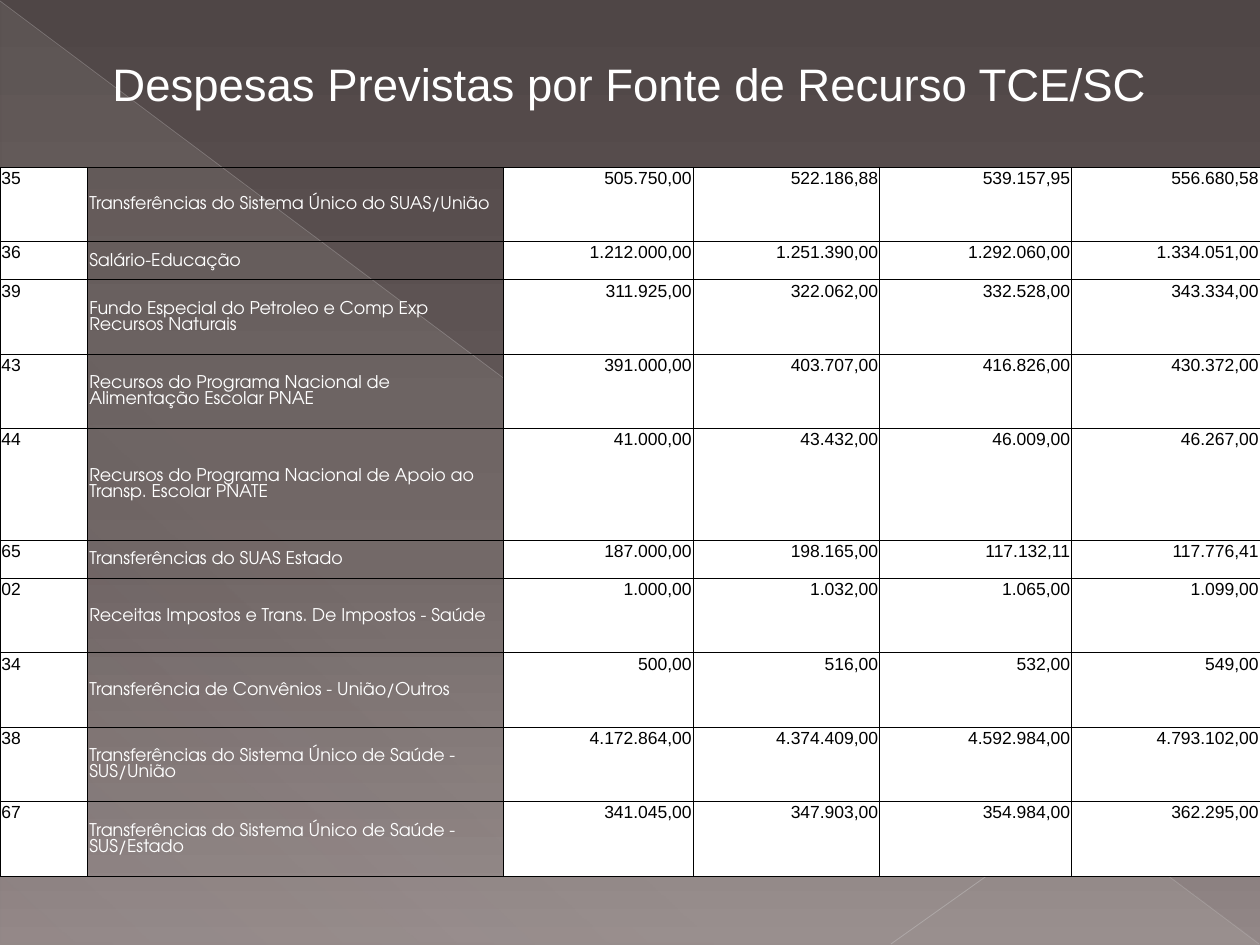
"""Build the slide of planned expenses by source of funds."""
from dataclasses import dataclass

from lxml.etree import SubElement
from pptx import Presentation
from pptx.dml.color import RGBColor
from pptx.enum.shapes import MSO_CONNECTOR as Connector, MSO_SHAPE as Shape
from pptx.enum.text import MSO_ANCHOR as Anchor, MSO_AUTO_SIZE as AutoSize, PP_ALIGN as Align
from pptx.oxml import parse_xml
from pptx.oxml.ns import nsdecls, qn
from pptx.util import Cm, Pt


@dataclass(frozen=True)
class Theme:
    light: str = "FFFFFF"
    dark: str = "000000"
    glow: str = "E9E5DC"
    backdrop: tuple = ((0, "4F4646", 100), (60, "685D5D", 100), (100, "928787", 100))
    font: str = "Arial"
    label_font: str = "TeX Gyre Adventor"
    title_size: float = 26
    table_size: float = 10
    border: float = 0.5


theme = Theme()


def write(frame, text, *, font=theme.font, size=theme.table_size, color=theme.dark, align=Align.LEFT):
    para = frame.paragraphs[0]
    para.alignment = align
    span = para.add_run()
    span.text = text
    span.font.name = font
    span.font.size = Pt(size)
    span.font.color.rgb = RGBColor.from_string(color)


def paint_gradient(owner, stops, angle):
    owner.fill.solid() if hasattr(owner, "fill") else owner.background.fill.solid()
    solid = owner.element.find(".//" + qn("a:solidFill"))
    marks = "".join(
        f'<a:gs pos="{place * 1000}"><a:srgbClr val="{color}">'
        f'<a:alpha val="{opacity * 1000}"/></a:srgbClr></a:gs>'
        for place, color, opacity in stops
    )
    solid.getparent().replace(solid, parse_xml(
        f'<a:gradFill {nsdecls("a")} rotWithShape="1"><a:gsLst>{marks}</a:gsLst>'
        f'<a:lin ang="{angle * 60000}" scaled="0"/></a:gradFill>'
    ))


deck = Presentation()
deck.slide_width, deck.slide_height = Cm(25.4), Cm(19.05)
page = deck.slides.add_slide(deck.slide_layouts[5])
paint_gradient(page, theme.backdrop, 90)

triangle = page.shapes.add_shape(Shape.RIGHT_TRIANGLE, Cm(0.02), Cm(0.04), Cm(25.38), Cm(19))
triangle.shadow.inherit = False
triangle.line.fill.background()
paint_gradient(triangle, [(0, theme.glow, 10), (70, theme.glow, 8), (100, theme.glow, 1)], 133)

diagonals = [
    ((0, 0.02, 25.38, 19.03), "C1BEBE", 0.39, 35),
    ((25.4, 13.74, 17.96, 19.03), "C7C5C5", 0.47, 45),
]
for ends, color, width, opacity in diagonals:
    diagonal = page.shapes.add_connector(Connector.STRAIGHT, *map(Cm, ends))
    diagonal.line.width = Pt(width)
    diagonal.line.color.rgb = RGBColor.from_string(color)
    tint = diagonal.element.find(".//" + qn("a:srgbClr"))
    SubElement(tint, qn("a:alpha"), val=str(opacity * 1000))
    SubElement(diagonal.element.spPr, qn("a:effectLst"))

title = page.shapes.title
title.left, title.top, title.width, title.height = Cm(0), Cm(1), Cm(25.4), Cm(1.37)
title.text_frame.word_wrap = True
title.text_frame.auto_size = AutoSize.SHAPE_TO_FIT_TEXT
title.text_frame.vertical_anchor = Anchor.MIDDLE
write(title.text_frame, "Despesas Previstas por Fonte de Recurso TCE/SC",
      size=theme.title_size, color=theme.light, align=Align.CENTER)
title.element.getparent().append(title.element)

low, normal, tall = 0.77, 1.5, 2.25
columns = [1.77, 8.37, 3.83, 3.76, 3.87, 3.8]
expenses = [
    (normal, "35", "Transferências do Sistema Único do SUAS/União",
     "505.750,00", "522.186,88", "539.157,95", "556.680,58"),
    (low, "36", "Salário-Educação",
     "1.212.000,00", "1.251.390,00", "1.292.060,00", "1.334.051,00"),
    (normal, "39", "Fundo Especial do Petroleo e Comp Exp Recursos Naturais",
     "311.925,00", "322.062,00", "332.528,00", "343.334,00"),
    (normal, "43", "Recursos do Programa Nacional de Alimentação Escolar PNAE",
     "391.000,00", "403.707,00", "416.826,00", "430.372,00"),
    (tall, "44", "Recursos do Programa Nacional de Apoio ao Transp. Escolar PNATE",
     "41.000,00", "43.432,00", "46.009,00", "46.267,00"),
    (low, "65", "Transferências do SUAS Estado",
     "187.000,00", "198.165,00", "117.132,11", "117.776,41"),
    (normal, "02", "Receitas Impostos e Trans. De Impostos - Saúde",
     "1.000,00", "1.032,00", "1.065,00", "1.099,00"),
    (normal, "34", "Transferência de Convênios - União/Outros",
     "500,00", "516,00", "532,00", "549,00"),
    (normal, "38", "Transferências do Sistema Único de Saúde - SUS/União",
     "4.172.864,00", "4.374.409,00", "4.592.984,00", "4.793.102,00"),
    (normal, "67", "Transferências do Sistema Único de Saúde - SUS/Estado",
     "341.045,00", "347.903,00", "354.984,00", "362.295,00"),
]
total_height = sum(expense[0] for expense in expenses)
table = page.shapes.add_table(len(expenses), len(columns), Cm(0), Cm(3.37),
                              Cm(sum(columns)), Cm(total_height)).table
table.first_row = table.horz_banding = False
for column, width in zip(table.columns, columns):
    column.width = Cm(width)

for row, (height, *texts) in zip(table.rows, expenses):
    row.height = Cm(height)
    for index, (cell, text) in enumerate(zip(row.cells, texts)):
        cell.margin_left = cell.margin_right = cell.margin_top = Cm(0.03)
        cell.margin_bottom = Cm(0)
        for side in ("lnL", "lnR", "lnT", "lnB"):
            cell._tc.get_or_add_tcPr().append(parse_xml(
                f'<a:{side} {nsdecls("a")} w="{Pt(theme.border)}"><a:solidFill>'
                f'<a:srgbClr val="{theme.dark}"/></a:solidFill></a:{side}>'
            ))
        if index == 1:
            cell.fill.background()
            cell.vertical_anchor = Anchor.MIDDLE
            write(cell.text_frame, text, font=theme.label_font, color=theme.light)
        else:
            cell.fill.solid()
            cell.fill.fore_color.rgb = RGBColor.from_string(theme.light)
            cell.vertical_anchor = Anchor.TOP
            write(cell.text_frame, text, align=Align.RIGHT if index else Align.LEFT)

deck.save("out.pptx")
